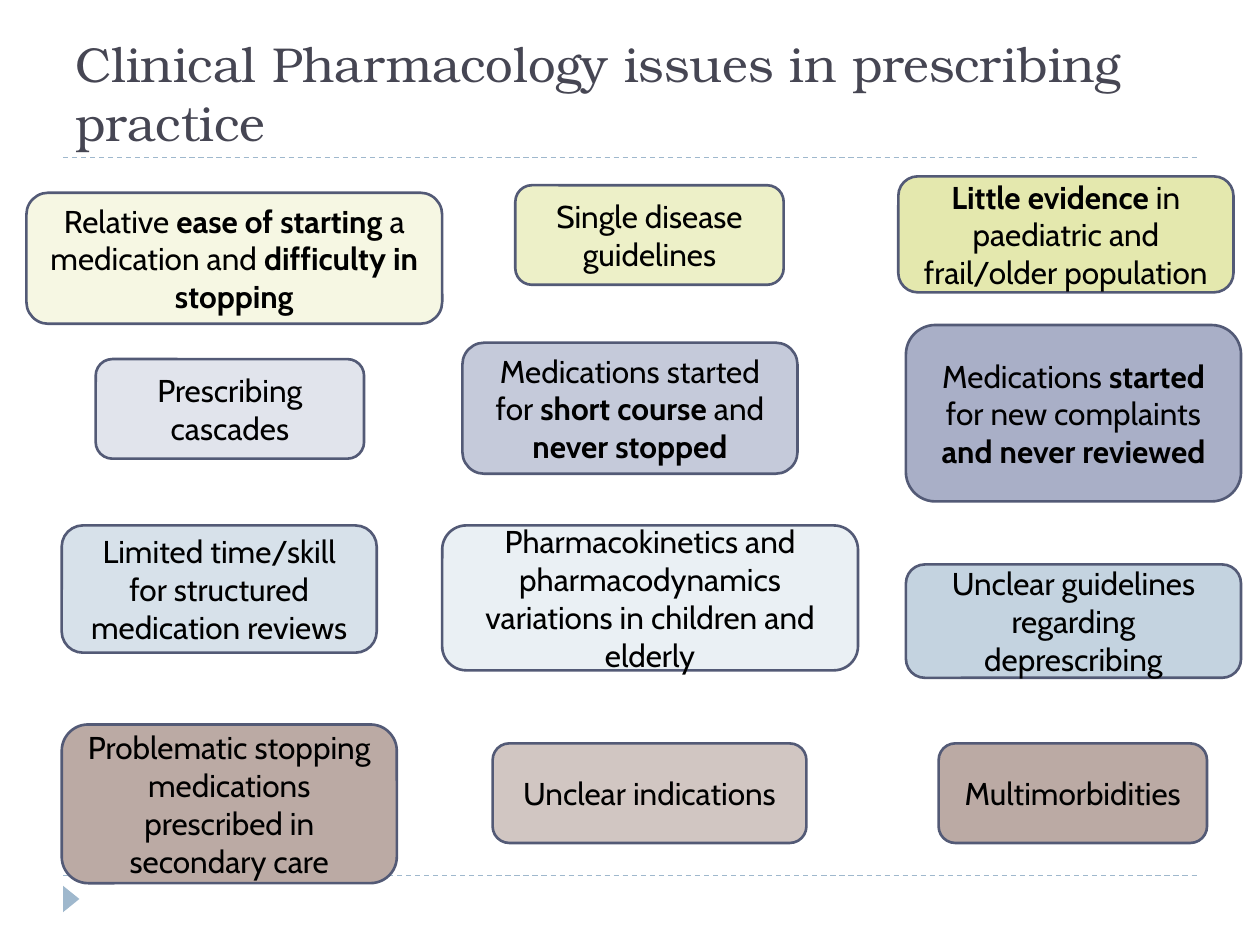
from lxml import etree
from pptx import Presentation
from pptx.dml.color import RGBColor
from pptx.enum.dml import MSO_LINE
from pptx.enum.shapes import MSO_CONNECTOR, MSO_SHAPE
from pptx.enum.text import MSO_ANCHOR, PP_ALIGN
from pptx.oxml.ns import qn
from pptx.util import Inches, Pt

ROUND = MSO_SHAPE.ROUNDED_RECTANGLE
TRIANGLE = MSO_SHAPE.ISOSCELES_TRIANGLE
STRAIGHT = MSO_CONNECTOR.STRAIGHT
DASH = MSO_LINE.DASH
MIDDLE, BOTTOM = MSO_ANCHOR.MIDDLE, MSO_ANCHOR.BOTTOM
LEFT, CENTER = PP_ALIGN.LEFT, PP_ALIGN.CENTER

BLACK = RGBColor(0x00, 0x00, 0x00)
INK = RGBColor(0x46, 0x46, 0x53)
SKY = RGBColor(0x9F, 0xB8, 0xCD)
EDGE = RGBColor(0x53, 0x5A, 0x76)
CREAM = RGBColor(0xF6, 0xF7, 0xE3)
LIME = RGBColor(0xED, 0xF0, 0xC8)
OLIVE = RGBColor(0xE4, 0xE8, 0xAE)
MIST = RGBColor(0xE1, 0xE4, 0xEC)
LILAC = RGBColor(0xC5, 0xCA, 0xDA)
VIOLET = RGBColor(0xA9, 0xAF, 0xC7)
ICE = RGBColor(0xD7, 0xE1, 0xEA)
FROST = RGBColor(0xEA, 0xF0, 0xF4)
STEEL = RGBColor(0xC4, 0xD3, 0xE0)
BROWN = RGBColor(0xBB, 0xAA, 0xA4)
TAUPE = RGBColor(0xD1, 0xC6, 0xC2)

# Left, top, width, height, fill, text; ** marks bold.
ISSUES = [
    (0.21, 1.53, 3.3, 1.04, CREAM,
     "Relative **ease of starting **a medication and **difficulty in stopping**"),
    (4.09, 1.47, 2.13, 0.79, LIME, "Single disease guidelines"),
    (7.13, 1.4, 2.66, 0.92, OLIVE,
     "**Little evidence** in paediatric and frail/older population"),
    (0.76, 2.85, 2.13, 0.79, MIST, "Prescribing cascades"),
    (3.67, 2.72, 2.66, 1.04, LILAC,
     "Medications started for **short course **and **never stopped**"),
    (7.19, 2.58, 2.66, 1.4, VIOLET,
     "Medications **started** for new complaints **and never reviewed**"),
    (0.49, 4.17, 2.5, 1.01, ICE,
     "Limited time/skill for structured medication reviews"),
    (3.51, 4.17, 3.3, 1.15, FROST,
     "Pharmacokinetics and pharmacodynamics variations in children and elderly"),
    (7.19, 4.48, 2.66, 0.9, STEEL, "Unclear guidelines regarding deprescribing"),
    (0.49, 5.75, 2.66, 1.26, BROWN,
     "Problematic stopping medications prescribed in secondary care"),
    (3.91, 5.9, 2.49, 0.79, TAUPE, "Unclear indications"),
    (7.45, 5.9, 2.13, 0.79, BROWN, "Multimorbidities"),
]


class Deck:
    head_font, body_font = "TeX Gyre Bonum", "Cabin"
    head_size, body_size = Pt(28), Pt(18)

    def __init__(self, slide):
        self.slide = slide
        self.shapes = slide.shapes

    def label(self, frame, text, font, size, color, align, anchor):
        """Fill a text frame, with bold between ** marks."""
        frame.word_wrap = True
        frame.vertical_anchor = anchor
        para = frame.paragraphs[0]
        para.alignment = align
        para.font.name, para.font.size = font, size
        para.font.color.rgb = color
        for i, part in enumerate(text.split("**")):
            if part:
                run = para.add_run()
                run.text = part
                if i % 2:
                    run.font.bold = True

    def title(self, text, *box):
        shape = self.shapes.add_textbox(*map(Inches, box))
        self.label(shape.text_frame, text, self.head_font, self.head_size,
                   INK, LEFT, BOTTOM)

    def rule(self, left, right, top):
        line = self.shapes.add_connector(
            STRAIGHT, *map(Inches, (left, top, right, top)))
        line.line.color.rgb = SKY
        line.line.width = Pt(0.75)
        line.line.dash_style = DASH
        etree.SubElement(line._element.spPr, qn("a:effectLst"))

    def shape(self, kind, box, fill):
        shape = self.shapes.add_shape(kind, *map(Inches, box))
        shape.shadow.inherit = False
        shape.fill.solid()
        shape.fill.fore_color.rgb = fill
        return shape

    def marker(self, *box):
        shape = self.shape(TRIANGLE, box, SKY)
        shape.line.fill.background()
        shape.rotation = 90

    def card(self, box, fill, text):
        shape = self.shape(ROUND, box, fill)
        shape.line.color.rgb = EDGE
        shape.line.width = Pt(1.5)
        self.label(shape.text_frame, text, self.body_font, self.body_size,
                   BLACK, CENTER, MIDDLE)


def main():
    prs = Presentation()
    prs.slide_width, prs.slide_height = Inches(10), Inches(7.5)
    deck = Deck(prs.slides.add_slide(prs.slide_layouts[6]))
    for top in (6.95, 1.25):
        deck.rule(0.5, 9.5, top)
    deck.marker(0.46, 7.07, 0.21, 0.13)
    deck.title("Clinical Pharmacology issues in prescribing practice",
               0.5, 0.17, 9, 1.08)
    for *box, fill, text in ISSUES:
        deck.card(box, fill, text)
    prs.save("out.pptx")


if __name__ == "__main__":
    main()
